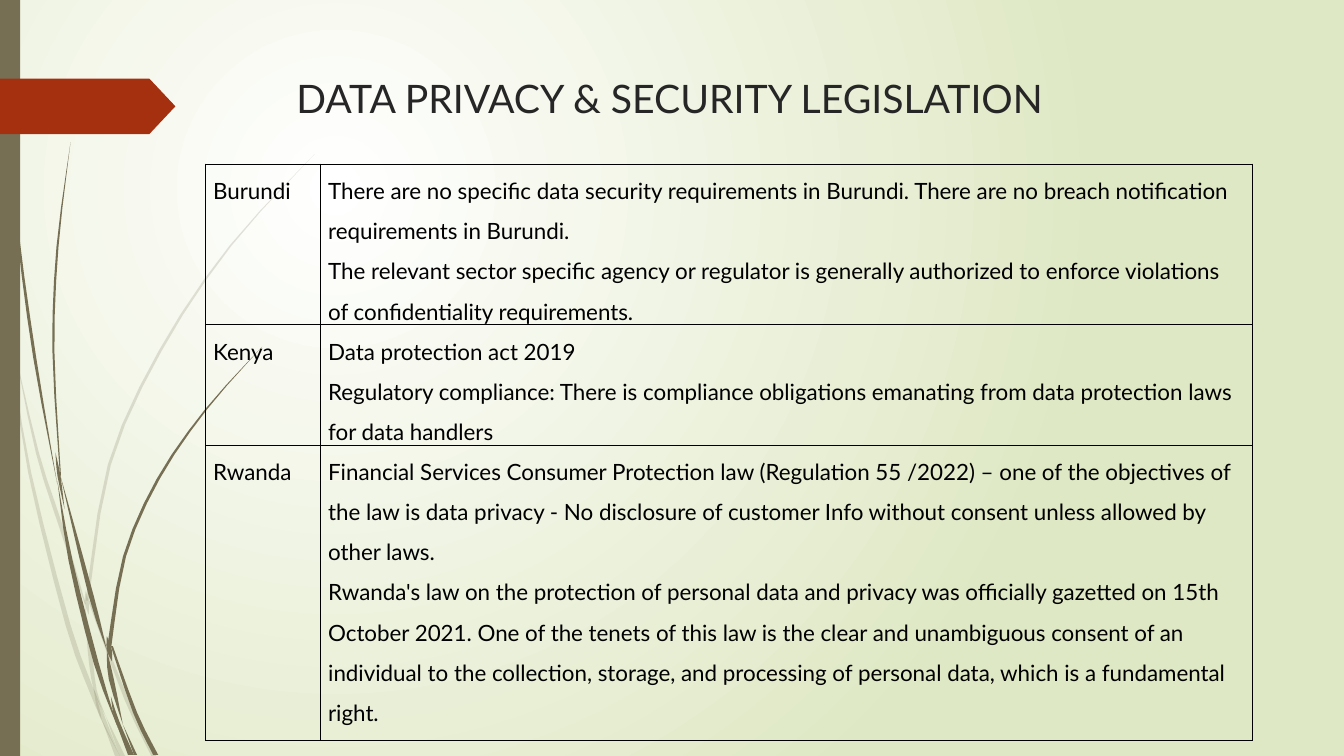
"""Build the slide on data privacy and security legislation in East Africa."""
from dataclasses import dataclass

import pptx
import pptx.dml.color
import pptx.enum.shapes
import pptx.enum.text
import pptx.oxml
import pptx.oxml.ns
import pptx.util

CELL = pptx.util.Inches(0.1)
COLUMNS, ROWS = 133.3, 75
SAMPLES = 3

Knot = tuple[float, float, float]


@dataclass(frozen=True)
class Theme:
    font: str = "Lato"
    title_size: int = 28
    body_size: int = 16
    title: str = "262626"
    body: str = "000000"
    olive: str = "766F54"
    rust: str = "A53010"
    glow: str = "FFFFFF"
    meadow: str = "DFE8C4"
    faint: int = 20


@dataclass(frozen=True)
class Tuft:
    opacity: int
    blades: tuple[tuple[Knot, ...], ...]


@dataclass(frozen=True)
class Country:
    name: str
    rows: float
    laws: tuple[str, ...]


THEME = Theme()

TUFTS = (
    Tuft(THEME.faint, (
        ((0, 28.2, 0), (0.3, 30.5, 0.4), (1.1, 35, 0)),
        ((1.4, 34.5, 0), (3.7, 44.9, 0.3), (6, 52.1, 0.4), (8.45, 59.9, 0.1)),
        ((8.85, 59.6, 0.2), (12.5, 69.3, 0.4), (15.25, 75, 0.5)),
        ((10.5, 71.1, 0), (12.15, 75, 0.5)),
        ((1.1, 35, 0), (2.95, 46.9, 0.3), (6.75, 62, 0.5), (9.2, 68.8, 0.5), (10.1, 71.4, 0)),
        ((8.4, 59.9, 0), (8.9, 64.6, 0.4), (9.45, 68.5, 0.3), (10.5, 71.1, 0)),
        ((31.2, 15.3, 0), (22.85, 24.4, 0.2), (15.9, 34.8, 0.3), (10.85, 46.1, 0.3),
         (8.65, 59.6, 0.3)),
        ((10.1, 71.4, 0), (11.65, 75, 0.5)),
        ((8.5, 58.6, 0), (8.6, 59.8, 0.4), (8.8, 61, 0)),
        ((9.3, 68.3, 0), (10.1, 71, 0.5), (11.9, 75, 0)))),
    Tuft(100, (
        ((0.35, 0, 0.1), (0.75, 11, 0.1), (1.8, 23.3, 0.2), (3.45, 35.5, 0.3), (5.7, 48.1, 0)),
        ((6, 47.2, 0), (9.05, 59.1, 0.5), (10.6, 64.5, 0)),
        ((11.1, 64.1, 0.2), (13.4, 70.7, 0.4), (15.45, 74.9, 0.5)),
        ((5.7, 47.7, 0), (7, 55.6, 0.4), (9.55, 65.8, 0.5), (11.7, 72.2, 0)),
        ((7, 14.1, 0), (5.7, 24.5, 0.2), (5.3, 34.9, 0.2), (6, 47.2, 0.1)),
        ((12.2, 71.9, 0), (13.45, 74.9, 0.3)),
        ((5.5, 44.9, 0), (5.85, 47.2, 0.3), (6.4, 50.5, 0)),
        ((26, 34.4, 0), (20.45, 40.6, 0.2), (15.7, 47.5, 0.3), (12.35, 55.2, 0.3),
         (10.85, 64.1, 0.4)),
        ((11.7, 72.2, 0), (12.9, 74.9, 0.4)),
        ((10.6, 64.5, 0), (11.05, 67.4, 0.5), (12.2, 71.9, 0)),
        ((10.6, 63.1, 0), (10.85, 64.5, 0.5), (11.1, 65.6, 0)),
        ((11, 69.1, 0), (11.65, 71.6, 0.4), (13.15, 74.9, 0.3)))),
)

COUNTRIES = (
    Country("Burundi", 15.1, (
        "There are no specific data security requirements in Burundi. There are no "
        "breach notification requirements in Burundi.",
        "The relevant sector specific agency or regulator is generally authorized to "
        "enforce violations of confidentiality requirements.")),
    Country("Kenya", 11.6, (
        "Data protection act 2019",
        "Regulatory compliance: There is compliance obligations emanating from data "
        "protection laws for data handlers")),
    Country("Rwanda", 29.3, (
        "Financial Services Consumer Protection law (Regulation 55 /2022) – one of the "
        "objectives of the law is data privacy - No disclosure of customer Info without "
        "consent unless allowed by other laws.",
        "Rwanda's law on the protection of personal data and privacy was officially "
        "gazetted on 15th October 2021. One of the tenets of this law is the clear and "
        "unambiguous consent of an individual to the collection, storage, and processing "
        "of personal data, which is a fundamental right.")),
)


def cells(count: float) -> pptx.util.Emu:
    return pptx.util.Emu(round(count * CELL))


def rgb(code: str) -> pptx.dml.color.RGBColor:
    return pptx.dml.color.RGBColor.from_string(code)


def xml(markup: str):
    namespace = pptx.oxml.ns.nsdecls("a")
    return pptx.oxml.parse_xml(markup.replace(">", f" {namespace}>", 1))


def format_runs(paragraph, size: int, color: str) -> None:
    for run in paragraph.runs:
        run.font.name = THEME.font
        run.font.size = pptx.util.Pt(size)
        run.font.color.rgb = rgb(color)


def paint(shape, color: str, opacity: int = 100) -> None:
    shape.shadow.inherit = False
    shape.line.fill.background()
    shape.fill.solid()
    shape.fill.fore_color.rgb = rgb(color)
    if opacity < 100:
        tint = next(shape._element.spPr.iter(pptx.oxml.ns.qn("a:srgbClr")))
        tint.append(xml(f'<a:alpha val="{opacity * 1000}"></a:alpha>'))


def paint_background(slide) -> None:
    fill = slide.background.fill
    fill.gradient()
    for stop, position, color in zip(fill.gradient_stops, (0, 1), (THEME.glow, THEME.meadow)):
        stop.position = position
        stop.color.rgb = rgb(color)
    linear = next(slide._element.iter(pptx.oxml.ns.qn("a:lin")))
    linear.getparent().replace(linear, xml(
        '<a:path path="circle">'
        '<a:fillToRect l="50000" t="50000" r="100000" b="100000"/></a:path>'))


def spline(knots: tuple[Knot, ...]) -> list[tuple[float, ...]]:
    ends = (knots[0], *knots, knots[-1])
    points = []
    for before, start, stop, after in zip(ends, ends[1:], ends[2:], ends[3:]):
        for step in range(SAMPLES):
            t = step / SAMPLES
            points.append(tuple(
                b + (c - a) * t / 2 + (2 * a - 5 * b + 4 * c - d) * t ** 2 / 2
                + (3 * b - a - 3 * c + d) * t ** 3 / 2
                for a, b, c, d in zip(before, start, stop, after)))
    return points + [knots[-1]]


def draw_blade(slide, knots: tuple[Knot, ...], opacity: int) -> None:
    spine = spline(knots)
    left = [(cells(x - max(width, 0) / 2), cells(y)) for x, y, width in spine]
    right = [(cells(x + max(width, 0) / 2), cells(y)) for x, y, width in spine]
    builder = slide.shapes.build_freeform(*left[0])
    builder.add_line_segments(left[1:] + right[::-1], close=True)
    paint(builder.convert_to_shape(), THEME.olive, opacity)


def draw_side_band(slide) -> None:
    kinds = pptx.enum.shapes.MSO_SHAPE
    bar = slide.shapes.add_shape(kinds.RECTANGLE, 0, 0, cells(2), cells(ROWS))
    paint(bar, THEME.olive)
    arrow = slide.shapes.add_shape(kinds.PENTAGON, 0, cells(7.8), cells(17.4), cells(5.5))
    arrow.adjustments[0] = 0.47
    paint(arrow, THEME.rust)


def write_title(slide, heading: str) -> None:
    title = slide.shapes.title
    title.left, title.top, title.width, title.height = map(cells, (28.4, 6.85, 97.5, 8))
    title.text_frame.text = heading
    title.text_frame.vertical_anchor = pptx.enum.text.MSO_ANCHOR.TOP
    line = title.text_frame.paragraphs[0]
    line.alignment = pptx.enum.text.PP_ALIGN.LEFT
    format_runs(line, THEME.title_size, THEME.title)


def fill_cell(cell, text: str) -> None:
    cell.margin_left = cell.margin_right = cells(0.75)
    cell.margin_top = cell.margin_bottom = 0
    for side in "LRTB":
        cell._tc.get_or_add_tcPr().append(xml(
            f'<a:ln{side} w="12700"><a:solidFill><a:srgbClr val="{THEME.body}"/>'
            f'</a:solidFill></a:ln{side}>'))
    cell.fill.background()
    cell.text_frame.text = text
    for paragraph in cell.text_frame.paragraphs:
        paragraph.line_spacing = 1.5
        format_runs(paragraph, THEME.body_size, THEME.body)


def draw_laws(slide, countries: tuple[Country, ...]) -> None:
    height = sum(country.rows for country in countries)
    laws = slide.shapes.add_table(
        len(countries), 2, cells(20.4), cells(16.3), cells(103.8), cells(height)).table
    laws.first_row = laws.horz_banding = False
    for column, width in zip(laws.columns, (11.4, 92.4)):
        column.width = cells(width)
    for index, country in enumerate(countries):
        laws.rows[index].height = cells(country.rows)
        fill_cell(laws.cell(index, 0), country.name)
        fill_cell(laws.cell(index, 1), "\n".join(country.laws))


def main() -> None:
    deck = pptx.Presentation()
    deck.slide_width, deck.slide_height = cells(COLUMNS), cells(ROWS)
    slide = deck.slides.add_slide(deck.slide_layouts[5])
    paint_background(slide)
    for tuft in TUFTS:
        for knots in tuft.blades:
            draw_blade(slide, knots, tuft.opacity)
    draw_side_band(slide)
    write_title(slide, "DATA PRIVACY & SECURITY LEGISLATION")
    draw_laws(slide, COUNTRIES)
    deck.save("out.pptx")


if __name__ == "__main__":
    main()
